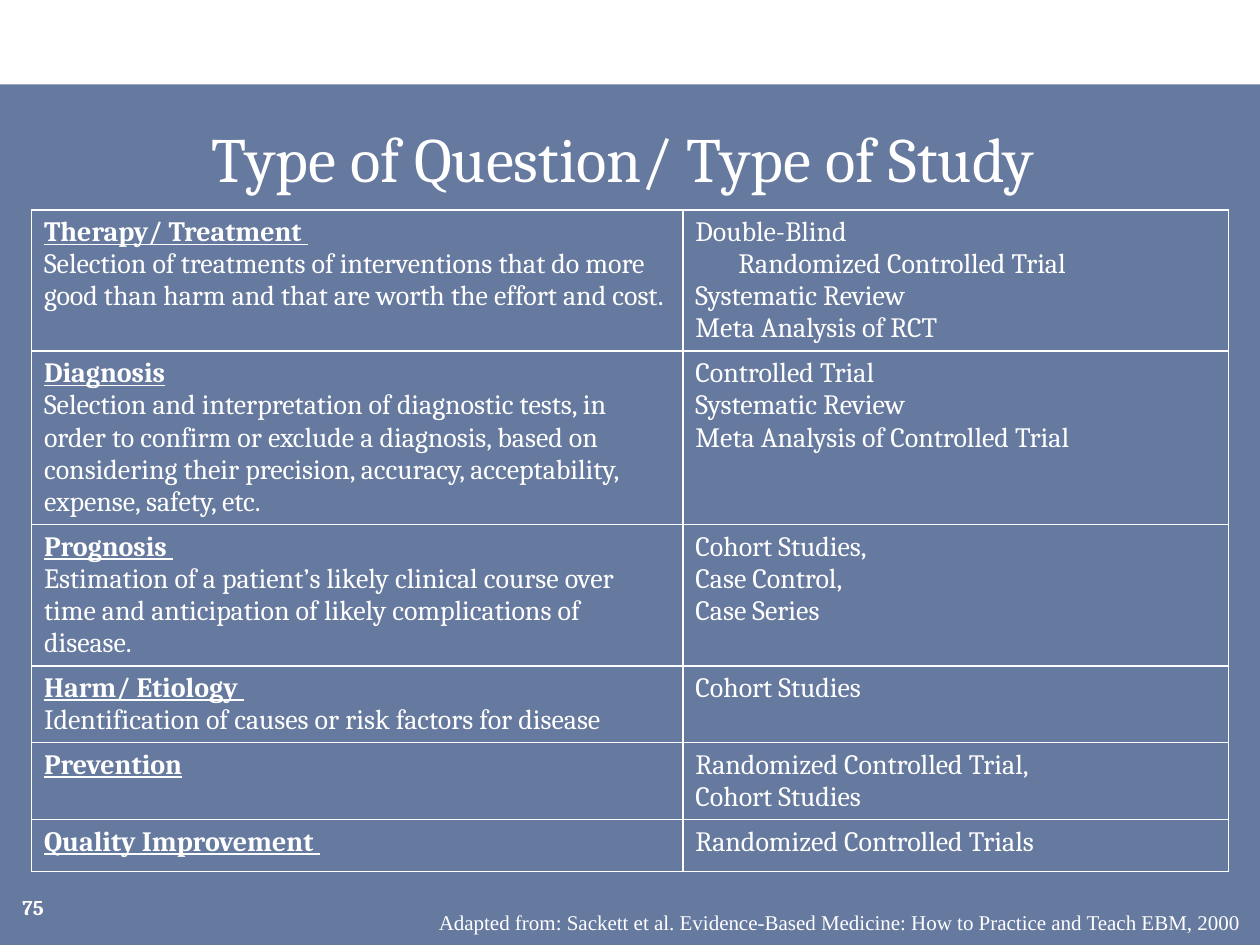
import pptx
import pptx.util
import pptx.dml.color
import pptx.enum.shapes
import pptx.enum.text
import pptx.oxml
import pptx.oxml.ns
from lxml import etree

Inches, Pt = pptx.util.Inches, pptx.util.Pt
RGBColor = pptx.dml.color.RGBColor
PP_ALIGN, ANCHOR = pptx.enum.text.PP_ALIGN, pptx.enum.text.MSO_ANCHOR

WHITE = RGBColor(0xFF, 0xFF, 0xFF)
NAVY = RGBColor(0x00, 0x20, 0x60)
LINE_HEIGHT, CELL_PADDING, MIN_ROW = 0.255, 0.1, 0.41

# Each row: heading, description, lines the description fills, study types
QUESTIONS = [
    ("Therapy/ Treatment ",
     "Selection of treatments of interventions that do more good than harm "
     "and that are worth the effort and cost.", 2,
     ["Double-Blind", "Randomized Controlled Trial", "Systematic Review",
      "Meta Analysis of RCT"]),
    ("Diagnosis",
     "Selection and interpretation of diagnostic tests, in order to confirm or "
     "exclude a diagnosis, based on considering their precision, accuracy, "
     "acceptability, expense, safety, etc.", 4,
     ["Controlled Trial", "Systematic Review", "Meta Analysis of Controlled Trial"]),
    ("Prognosis ",
     "Estimation of a patient’s likely clinical course over time and "
     "anticipation of likely complications of disease.", 3,
     ["Cohort Studies,", "Case Control,", "Case Series"]),
    ("Harm/ Etiology ",
     "Identification of causes or risk factors for disease", 1,
     ["Cohort Studies"]),
    ("Prevention", "", 0, ["Randomized Controlled Trial,", "Cohort Studies"]),
    ("Quality Improvement ", "", 0, ["Randomized Controlled Trials"]),
]


def format_text(paragraph, size, font="Cambria", bold=False, align=PP_ALIGN.LEFT):
    paragraph.alignment = align
    for run in paragraph.runs:
        run.font.size = Pt(size)
        run.font.name = font
        run.font.bold = bold
        run.font.color.rgb = WHITE


def fill_cell(cell, lines):
    cell.fill.background()
    cell.text_frame.text = "\n".join(lines)
    for paragraph in cell.text_frame.paragraphs:
        format_text(paragraph, 16)
    # White one-point borders, placed before the fill as the schema asks
    properties = cell._tc.get_or_add_tcPr()
    for position, side in enumerate(("lnL", "lnR", "lnT", "lnB")):
        properties.insert(position, pptx.oxml.parse_xml(
            f'<a:{side} {pptx.oxml.ns.nsdecls("a")} w="12700"><a:solidFill>'
            f'<a:srgbClr val="{WHITE}"/></a:solidFill></a:{side}>'))


prs = pptx.Presentation()
prs.slide_width, prs.slide_height = Inches(10), Inches(7.5)
W, H = prs.slide_width, prs.slide_height
slide = prs.slides.add_slide(prs.slide_layouts[5])

# Translucent panel behind everything
panel = slide.shapes.add_shape(
    pptx.enum.shapes.MSO_SHAPE.RECTANGLE, 0, Inches(0.67), W, H - Inches(0.67))
panel.shadow.inherit = False
panel.line.fill.background()
panel.fill.solid()
panel.fill.fore_color.rgb = NAVY
navy_element = panel._element.spPr.find(".//" + pptx.oxml.ns.qn("a:srgbClr"))
etree.SubElement(navy_element, pptx.oxml.ns.qn("a:alpha"), val="60000")
slide.shapes._spTree.insert(2, panel._element)

# Title
title = slide.shapes.title
title.left, title.top = int(W * 0.025), int(H / 9)
title.width, title.height = int(W * 0.95), int(H / 9)
title.text_frame.text = "Type of Question/ Type of Study "
title.text_frame.vertical_anchor = ANCHOR.MIDDLE
format_text(title.text_frame.paragraphs[0], 36, align=PP_ALIGN.CENTER)

# Question and study table
row_heights = [max(MIN_ROW, CELL_PADDING + LINE_HEIGHT * max(1 + count, len(studies)))
               for _, _, count, studies in QUESTIONS]
table = slide.shapes.add_table(
    len(QUESTIONS), 2, int(W * 0.025), int(H * 2 / 9), int(W * 0.95),
    Inches(sum(row_heights))).table
table.first_row = table.horz_banding = False
table.columns[0].width, table.columns[1].width = Inches(5.17), Inches(4.33)

for row, (heading, description, _, studies) in enumerate(QUESTIONS):
    table.rows[row].height = Inches(row_heights[row])
    question, study = table.cell(row, 0), table.cell(row, 1)
    fill_cell(question, [heading, description] if description else [heading])
    fill_cell(study, studies)
    heading_font = question.text_frame.paragraphs[0].runs[0].font
    heading_font.bold = heading_font.underline = True

# The trial continues the "Double-Blind" line, so it is indented
trial = table.cell(0, 1).text_frame.paragraphs[1]
trial._p.get_or_add_pPr().set("marL", str(Inches(0.34)))

# Source line and slide number
source = slide.shapes.add_textbox(Inches(3.17), Inches(7.17), W - Inches(3.17), Inches(0.3))
source.text_frame.word_wrap = True
source.text_frame.margin_right = Inches(0.15)
source.text_frame.text = ("Adapted from: Sackett et al. Evidence-Based Medicine: "
                          "How to Practice and Teach EBM, 2000")
format_text(source.text_frame.paragraphs[0], 12, "Times New Roman", align=PP_ALIGN.RIGHT)

number = slide.shapes.add_textbox(Inches(0.08), Inches(7), Inches(2.25), Inches(0.4))
number.text_frame.word_wrap = True
number.text_frame.vertical_anchor = ANCHOR.MIDDLE
number.text_frame.text = "75"
format_text(number.text_frame.paragraphs[0], 12, bold=True)

prs.save("out.pptx")
